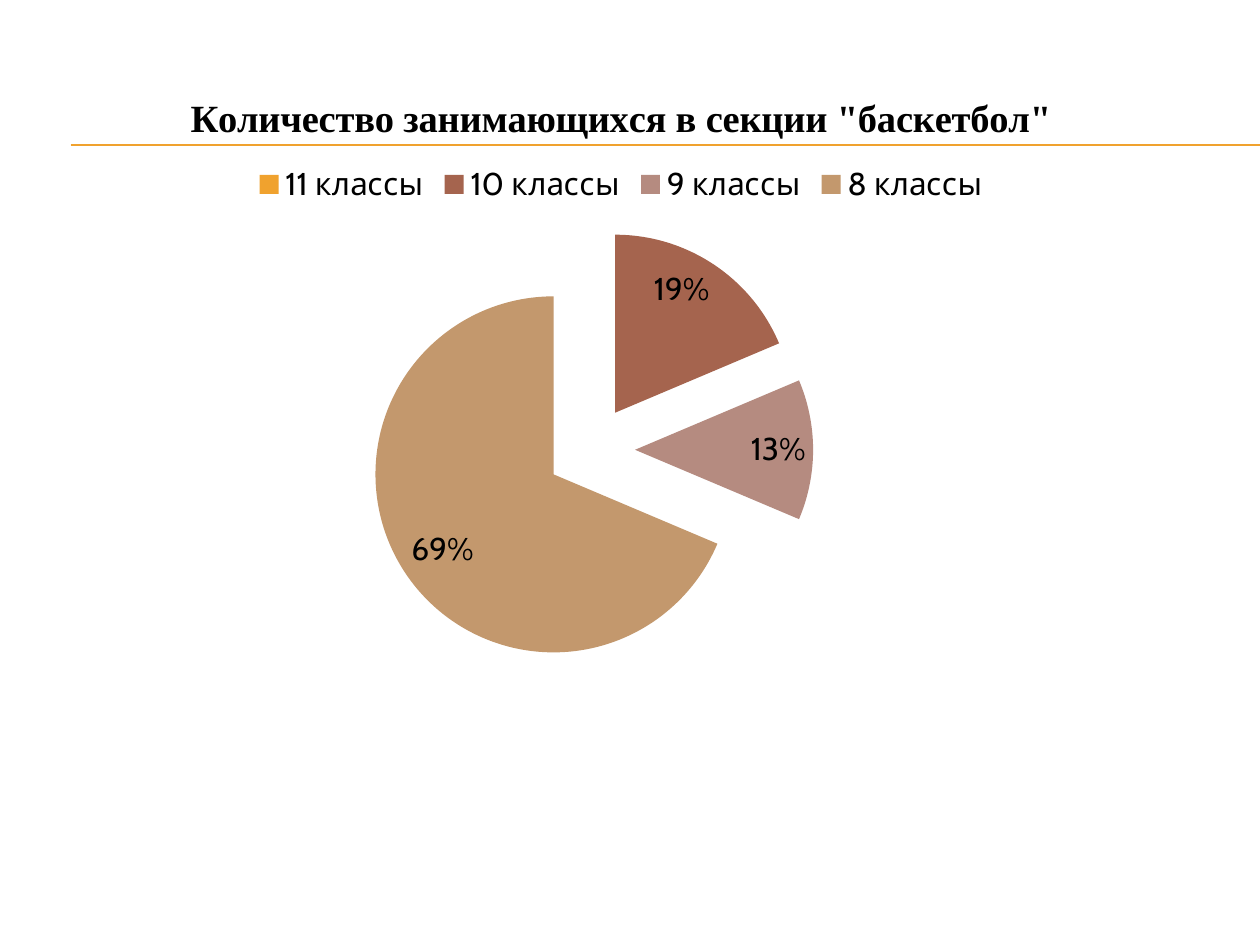
from lxml import etree
from pptx import Presentation
from pptx.chart.data import CategoryChartData
from pptx.dml.color import RGBColor
from pptx.enum.chart import XL_CHART_TYPE, XL_LABEL_POSITION, XL_LEGEND_POSITION
from pptx.enum.shapes import MSO_CONNECTOR
from pptx.oxml import parse_xml
from pptx.oxml.ns import nsdecls, qn
from pptx.util import Pt

PIE = XL_CHART_TYPE.PIE
INSIDE_END = XL_LABEL_POSITION.INSIDE_END
TOP = XL_LEGEND_POSITION.TOP
STRAIGHT = MSO_CONNECTOR.STRAIGHT

# Content: class, relative weight (labels show 19%, 13%, 69%), colour
TITLE = 'Количество занимающихся в секции "баскетбол"'
CLASSES = [
    ("11 классы", 0, "F0A22E"),
    ("10 классы", 19, "A5644E"),
    ("9 классы", 13, "B58B80"),
    ("8 классы", 70, "C3986D"),
]
RULE_COLOR, TEXT_COLOR = "F0A22E", "000000"
WIDTH, HEIGHT = 720, 540
RULE_LEFT, RULE_TOPS = 40.4, (82.8, 83.2)
CHART_BOX = (31, 37.4, 648, 356.4)
# Percent of the chart frame
PLOT_LAYOUT = {"x": 31.6, "y": 33.1, "w": 31.4, "h": 57.1}
TITLE_LAYOUT = {"x": 11.4, "y": 3.4}


def rgb(value):
    return RGBColor.from_string(value)


def set_font(font, size, name, bold=False, color=TEXT_COLOR):
    font.size, font.name, font.bold = Pt(size), name, bold
    font.color.rgb = rgb(color)


def add_text(tf, text, **fmt):
    r = tf.paragraphs[0].add_run()
    r.text = text
    set_font(r.font, **fmt)


def layout(percents, inner=False):
    target = '<c:layoutTarget val="inner"/>' if inner else ""
    modes = "".join(f'<c:{k}Mode val="edge"/>' for k in percents if k in "xy")
    values = "".join(f'<c:{k} val="{v / 100:.3f}"/>' for k, v in percents.items())
    return parse_xml(f'<c:layout {nsdecls("c")}><c:manualLayout>{target}{modes}'
                     f'{values}</c:manualLayout></c:layout>')


def replace_layout(parent, new, index):
    for old in parent.findall(qn("c:layout")):
        parent.remove(old)
    parent.insert(index, new)


prs = Presentation()
prs.slide_width, prs.slide_height = Pt(WIDTH), Pt(HEIGHT)
s = prs.slides.add_slide(prs.slide_layouts[6])

# Double rule under the title
for y in RULE_TOPS:
    rule = s.shapes.add_connector(STRAIGHT, Pt(RULE_LEFT), Pt(y), Pt(WIDTH), Pt(y))
    rule.line.color.rgb = rgb(RULE_COLOR)
    rule.line.width = Pt(0.75)
    etree.SubElement(rule._element.spPr, qn("a:effectLst"))

# Pie chart
names, weights, colors = zip(*CLASSES)
data = CategoryChartData()
data.categories = names
data.add_series("Series 1", weights)
chart = s.shapes.add_chart(PIE, *map(Pt, CHART_BOX), data).chart
set_font(chart.font, 18, "Cabin")
plot = chart.plots[0]
plot.vary_by_categories = True
replace_layout(chart._chartSpace.chart.plotArea, layout(PLOT_LAYOUT, inner=True), 0)

# Title and legend
chart.has_title = True
add_text(chart.chart_title.text_frame, TITLE, size=22, name="Times New Roman", bold=True)
replace_layout(chart.chart_title._element, layout(TITLE_LAYOUT), 1)
chart.chart_title.include_in_layout = False
chart.has_legend = True
chart.legend.position = TOP
chart.legend.include_in_layout = False

# Slices, pulled apart
series = plot.series[0]
for i, color in enumerate(colors):
    fill = series.points[i].format.fill
    fill.solid()
    fill.fore_color.rgb = rgb(color)
    explosion = etree.Element(qn("c:explosion"), val="25")
    series.points[i].format._element.find(qn("c:spPr")).addprevious(explosion)

# Percent labels, none on empty slices
labels = series.data_labels
labels.show_percentage, labels.show_value = True, False
labels.number_format, labels.number_format_is_linked = "0%", False
labels.position = INSIDE_END
set_font(labels.font, 18, "Cabin")
for i in reversed([i for i, weight in enumerate(weights) if not weight]):
    labels._element.insert(0, parse_xml(
        f'<c:dLbl {nsdecls("c")}><c:idx val="{i}"/><c:delete val="1"/></c:dLbl>'))

prs.save("out.pptx")
